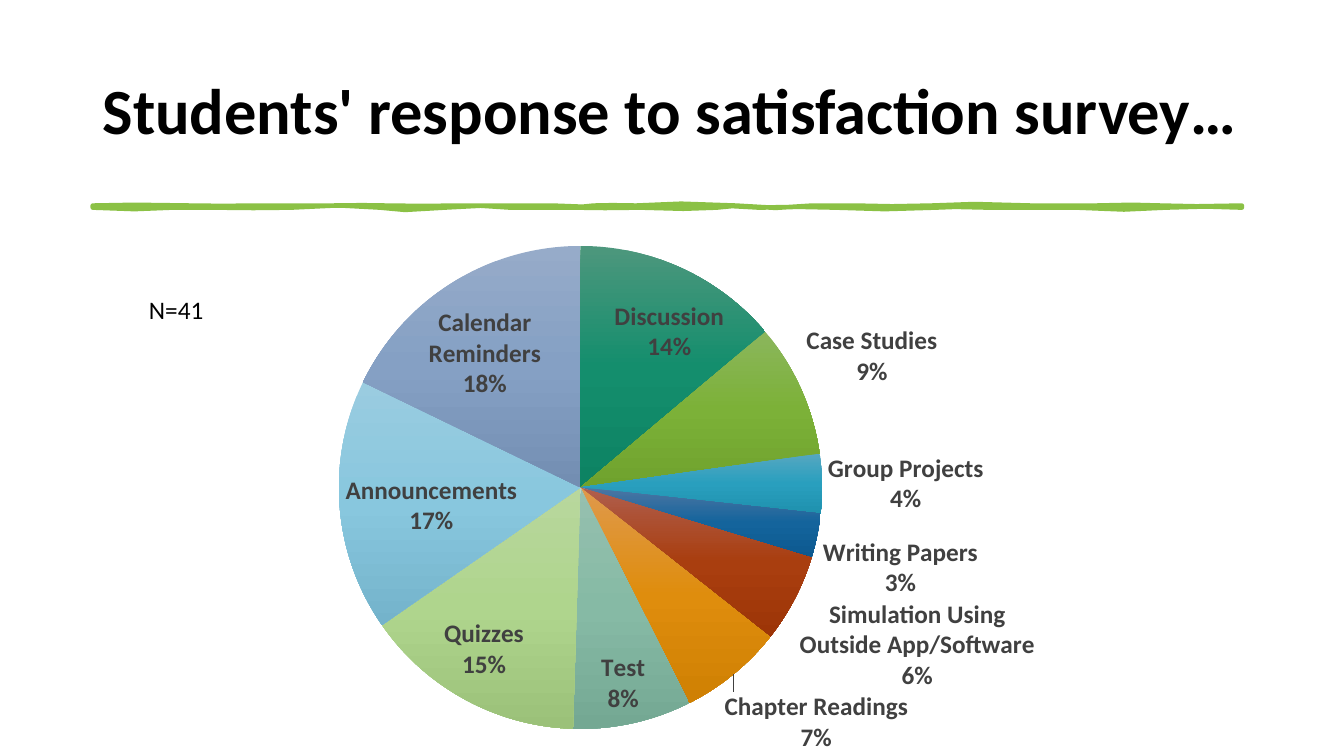
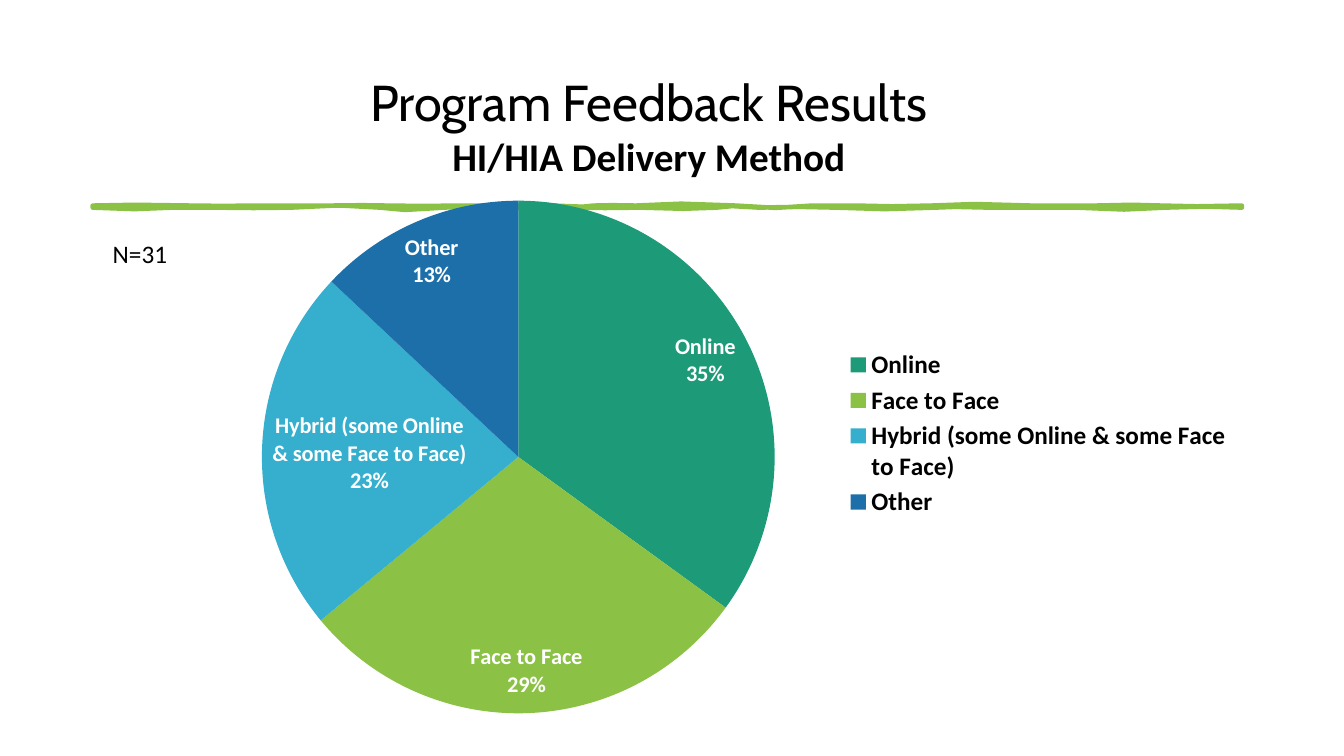
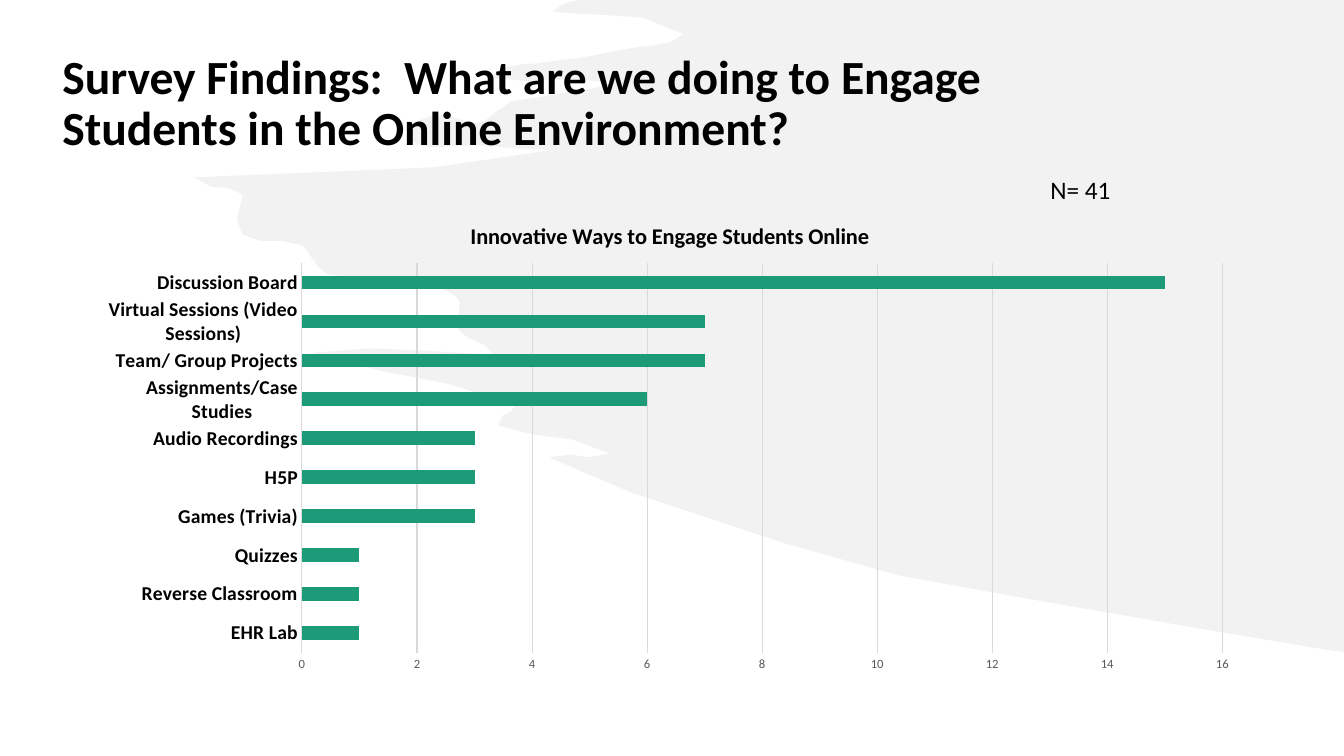
from copy import deepcopy
from dataclasses import dataclass

from lxml.etree import SubElement
from pptx import Presentation
from pptx.chart.data import CategoryChartData
from pptx.dml.color import RGBColor
from pptx.enum.chart import (XL_CHART_TYPE, XL_LABEL_POSITION,
                             XL_LEGEND_POSITION, XL_TICK_MARK)
from pptx.enum.text import MSO_ANCHOR, PP_ALIGN
from pptx.oxml import parse_xml
from pptx.oxml.ns import nsdecls, qn
from pptx.util import Inches, Pt


@dataclass(frozen=True)
class Theme:
    font: str = "Calibri"
    display_font: str = "Cabin"
    ink: str = "000000"
    grey: str = "595959"
    label_grey: str = "404040"
    grid: str = "D9D9D9"
    white: str = "FFFFFF"
    shade: str = "E7E6E6"
    teal: str = "1D9A78"
    green: str = "8BC145"
    sky: str = "36AFCE"
    blue: str = "1D6FA9"
    hero: int = 46
    display: int = 36
    heading: int = 34
    subtitle: int = 28
    body: int = 18
    label: int = 16
    category: int = 14
    small: int = 10
    tick: int = 9


THEME = Theme()

# Outlines lie on a fine grid over the slide; six numbers make one curve.
GRID_COLUMNS, GRID_ROWS = 1333.33, 750

BRUSH_START = (92, 204)
BRUSH_CURVES = [
    119, 204, 144, 202, 190, 204, 237, 206, 220, 203, 244, 204,
    267, 205, 303, 203, 331, 204, 360, 205, 359, 202, 384, 204,
    410, 206, 423, 203, 460, 204, 498, 205, 514, 203, 548, 204,
    581, 205, 581, 206, 589, 204, 598, 202, 615, 205, 631, 204,
    647, 203, 701, 200, 730, 204, 759, 208, 781, 206, 806, 204,
    831, 202, 827, 206, 848, 204, 868, 202, 901, 208, 924, 204,
    947, 200, 982, 204, 1023, 204, 1063, 204, 1063, 204, 1087, 204,
    1112, 204, 1136, 202, 1152, 204, 1168, 206, 1203, 204, 1232, 204,
    1232, 205, 1232, 205, 1232, 206, 1205, 206, 1189, 203, 1156, 206,
    1122, 209, 1110, 208, 1068, 206, 1027, 204, 1023, 208, 981, 206,
    939, 204, 952, 206, 928, 206, 904, 206, 851, 210, 829, 206,
    806, 202, 782, 208, 753, 206, 724, 204, 725, 204, 711, 206,
    698, 208, 661, 207, 635, 206, 609, 205, 590, 208, 570, 206,
    551, 204, 528, 208, 506, 206, 483, 204, 473, 203, 441, 206,
    409, 209, 390, 209, 377, 206, 363, 203, 310, 203, 289, 206,
    268, 209, 235, 204, 213, 206, 192, 208, 189, 204, 171, 206,
    154, 208, 114, 208, 92, 206, 92, 205, 92, 205, 92, 204]

WASH_START = (575, 0)
WASH_CURVES = [
    567, 1, 557, 3, 548, 12, 595, 19, 639, 6, 678, 34,
    664, 47, 648, 44, 632, 47, 616, 49, 600, 53, 584, 56,
    567, 59, 549, 60, 532, 63, 518, 65, 502, 61, 485, 77,
    527, 88, 566, 71, 608, 82, 584, 92, 563, 89, 544, 95,
    527, 100, 506, 94, 492, 111, 481, 124, 469, 126, 455, 118,
    442, 111, 428, 113, 415, 120, 411, 123, 406, 126, 406, 132,
    406, 141, 412, 143, 418, 144, 424, 146, 431, 147, 437, 146,
    474, 139, 510, 150, 547, 149, 431, 176, 314, 167, 193, 176,
    209, 195, 229, 179, 241, 193, 230, 222, 234, 237, 258, 239,
    280, 241, 304, 231, 316, 265, 320, 276, 341, 273, 355, 275,
    384, 279, 414, 275, 442, 288, 453, 293, 460, 297, 455, 311,
    449, 325, 456, 330, 466, 336, 473, 340, 483, 339, 489, 352,
    428, 350, 369, 340, 309, 350, 375, 374, 447, 373, 512, 402,
    510, 412, 495, 407, 494, 422, 528, 438, 569, 427, 605, 450,
    584, 461, 565, 444, 545, 454, 552, 469, 840, 561, 892, 571,
    978, 587, 1195, 625, 1318, 645]
WASH_CORNERS = [(1333.33, 647), (1333.33, 0)]

# Category, value, then the slice's top, middle and bottom shade
SATISFACTION = [
    ("Discussion", 14, ("4D977D", "148E6D", "0D8363")),
    ("Case Studies", 9, ("8BB65C", "7CB138", "6FA22D")),
    ("Group Projects", 4, ("55A7C1", "299FBE", "1F91AE")),
    ("Writing Papers", 3, ("4D76A3", "14649C", "0C5990")),
    ("Simulation Using Outside App/Software", 6,
     ("AF5E4D", "A93E0F", "9D3507")),
    ("Chapter Readings", 7, ("DF994C", "DF8D0D", "CF8003")),
    ("Test", 8, ("96C0AF", "86BAA5", "74A893")),
    ("Quizzes", 15, ("B8D79D", "AFD58D", "9BC179")),
    ("Announcements", 17, ("9ACCE0", "88C7DE", "74B3CB")),
    ("Calendar Reminders", 18, ("96ABC9", "85A0C4", "738EB2")),
]
DELIVERY = [
    ("Online", 35, (THEME.teal,)),
    ("Face to Face", 29, (THEME.green,)),
    ("Hybrid (some Online & some Face to Face)", 23, (THEME.sky,)),
    ("Other", 13, (THEME.blue,)),
]
ENGAGEMENT = [
    ("EHR Lab", 1), ("Reverse Classroom", 1), ("Quizzes", 1),
    ("Games (Trivia)", 3), ("H5P", 3), ("Audio Recordings", 3),
    ("Assignments/Case Studies", 6), ("Team/ Group Projects", 7),
    ("Virtual Sessions (Video Sessions)", 7), ("Discussion Board", 15),
]


def curve_points(start, curves, steps):
    """Turn a chain of cubic curves into short straight steps."""
    points = []
    for i in range(0, len(curves), 6):
        x1, y1, x2, y2, x3, y3 = curves[i:i + 6]
        for step in range(1, steps + 1):
            t = step / steps
            weights = ((1 - t) ** 3, 3 * t * (1 - t) ** 2,
                       3 * t * t * (1 - t), t ** 3)
            points.append(tuple(
                sum(w * v for w, v in zip(weights, values))
                for values in ((start[0], x1, x2, x3),
                               (start[1], y1, y2, y3))))
        start = (x3, y3)
    return points


class Deck:
    """Style and current slide; boxes are percentages of the slide's size."""

    def __init__(self, theme):
        self.theme = theme
        self.deck = Presentation()
        self.deck.slide_width = Inches(13.33)
        self.deck.slide_height = Inches(7.5)
        self.slide = None

    def new_slide(self):
        self.slide = self.deck.slides.add_slide(self.deck.slide_layouts[6])

    def box(self, shares):
        width, height = self.deck.slide_width, self.deck.slide_height
        return [round(size * share / 100)
                for size, share in zip((width, height) * 2, shares)]

    def style(self, font, size, color=None, bold=False, name=None):
        font.name = name or self.theme.font
        font.size = Pt(size)
        font.bold = bold
        font.color.rgb = RGBColor.from_string(color or self.theme.ink)

    # Text: each line is (words, size, bold, font name)
    def text(self, shares, lines, align=PP_ALIGN.LEFT,
             anchor=MSO_ANCHOR.TOP, spacing=None):
        frame = self.slide.shapes.add_textbox(*self.box(shares)).text_frame
        frame.word_wrap = True
        frame.vertical_anchor = anchor
        for i, (words, size, bold, name) in enumerate(lines):
            line = frame.add_paragraph() if i else frame.paragraphs[0]
            line.alignment = align
            line.line_spacing = spacing
            run = line.add_run()
            run.text = words
            self.style(run.font, size, bold=bold, name=name)

    def title(self, shares, words, size):
        self.text(shares, [(words, size, True, None)],
                  anchor=MSO_ANCHOR.MIDDLE, spacing=0.9)

    def sample_size(self, shares, words):
        self.text(shares, [(words, self.theme.body, False, None)])

    # Outlines
    def outline(self, start, curves, color, steps, corners=(), line=0,
                alpha=None):
        across = self.deck.slide_width / GRID_COLUMNS
        down = self.deck.slide_height / GRID_ROWS
        points = [(round(x * across), round(y * down)) for x, y in
                  [start, *curve_points(start, curves, steps), *corners]]
        builder = self.slide.shapes.build_freeform(*points[0], scale=1.0)
        builder.add_line_segments(points[1:], close=True)
        shape = builder.convert_to_shape()
        shape.shadow.inherit = False
        shape.fill.solid()
        shape.fill.fore_color.rgb = RGBColor.from_string(color)
        if line:
            shape.line.width = Pt(line)
            shape.line.color.rgb = RGBColor.from_string(color)
        else:
            shape.line.fill.background()
        if alpha:
            for fill in shape.element.spPr.findall(qn("a:solidFill")):
                SubElement(fill[0], qn("a:alpha")).set(
                    "val", str(alpha * 1000))

    def brush_rule(self):
        self.outline(BRUSH_START, BRUSH_CURVES, self.theme.green, steps=2,
                     line=3.25)

    def wash(self):
        self.outline(WASH_START, WASH_CURVES, self.theme.shade, steps=3,
                     corners=WASH_CORNERS, alpha=50)

    # Charts: the plot area is in percentages of the chart's size
    def chart(self, kind, shares, rows, plot_area):
        data = CategoryChartData()
        data.categories = [row[0] for row in rows]
        data.add_series("Series 1", [row[1] for row in rows])
        chart = self.slide.shapes.add_chart(
            kind, *self.box(shares), data).chart
        self.style(chart.font, self.theme.small)
        chart.has_title = chart.has_legend = False
        area = chart.element.xpath(".//c:plotArea")[0]
        for layout in area.findall(qn("c:layout")):
            area.remove(layout)
        sides = "".join(f'<c:{side} val="{share / 100:.4f}"/>'
                        for side, share in zip("xywh", plot_area))
        area.insert(0, parse_xml(
            f'<c:layout {nsdecls("c")}><c:manualLayout>'
            '<c:layoutTarget val="inner"/><c:xMode val="edge"/>'
            f'<c:yMode val="edge"/>{sides}</c:manualLayout></c:layout>'))
        return chart

    def slice_fill(self, chart, fill, shades):
        if len(shades) == 1:
            fill.solid()
            fill.fore_color.rgb = RGBColor.from_string(shades[0])
            return
        fill.gradient()
        fill.gradient_angle = 270
        stops = chart.element.xpath(".//a:gsLst")[-1]
        stops.insert(1, deepcopy(stops[0]))
        for i, stop in enumerate(fill.gradient_stops):
            stop.position = i / 2
            stop.color.rgb = RGBColor.from_string(shades[i])

    def pie(self, shares, rows, plot_area, size, color, inside=()):
        chart = self.chart(XL_CHART_TYPE.PIE, shares, rows, plot_area)
        chart.plots[0].vary_by_categories = False
        pie = chart.plots[0].series[0]
        for i, (_, _, shades) in enumerate(rows):
            self.slice_fill(chart, pie.points[i].format.fill, shades)
        labels = pie.data_labels
        labels.number_format = "0%"
        labels.number_format_is_linked = False
        labels.position = XL_LABEL_POSITION.BEST_FIT
        self.style(labels.font, size, color, bold=True)
        for i in inside:
            label = pie.points[i].data_label
            self.style(label.font, size, color, bold=True)
            label.position = XL_LABEL_POSITION.INSIDE_END
        # Every label shows its category over its percentage
        for tag, shown in (("showVal", "0"), ("showCatName", "1"),
                           ("showPercent", "1")):
            for flag in chart.element.xpath(f".//c:{tag}"):
                flag.set("val", shown)
        for flag in chart.element.xpath(".//c:showBubbleSize"):
            flag.addnext(parse_xml(
                f'<c:separator {nsdecls("c")}>\n</c:separator>'))
        return chart

    def legend(self, chart):
        chart.has_legend = True
        chart.legend.position = XL_LEGEND_POSITION.RIGHT
        chart.legend.include_in_layout = False
        self.style(chart.legend.font, self.theme.body, bold=True)

    def bars(self, shares, rows, plot_area, heading):
        theme = self.theme
        chart = self.chart(XL_CHART_TYPE.BAR_CLUSTERED, shares, rows,
                           plot_area)
        chart.has_title = True
        run = chart.chart_title.text_frame.paragraphs[0].add_run()
        run.text = heading
        self.style(run.font, theme.label, bold=True)
        plot = chart.plots[0]
        plot.vary_by_categories = False
        plot.gap_width = 182
        fill = plot.series[0].format.fill
        fill.solid()
        fill.fore_color.rgb = RGBColor.from_string(theme.teal)
        names, counts = chart.category_axis, chart.value_axis
        for axis in (names, counts):
            axis.major_tick_mark = axis.minor_tick_mark = XL_TICK_MARK.NONE
        self.style(names.tick_labels.font, theme.category, bold=True)
        self.style(counts.tick_labels.font, theme.tick, theme.grey)
        counts.minimum_scale, counts.maximum_scale = 0, 16
        counts.major_unit = 2
        counts.has_major_gridlines = True
        counts.format.line.fill.background()
        for line in (names.format.line, counts.major_gridlines.format.line):
            line.width = Pt(0.75)
            line.color.rgb = RGBColor.from_string(theme.grid)


def main():
    deck = Deck(THEME)

    # Satisfaction survey
    deck.new_slide()
    deck.title((6.9, 5.33, 86.25, 19.33),
               "Students' response to satisfaction survey…", THEME.hero)
    deck.brush_rule()
    deck.pie((1.95, 32.53, 91.15, 67.47), SATISFACTION,
             (6.2, 0, 78.1, 94.7), THEME.body, THEME.label_grey,
             inside=[8])
    deck.sample_size((10.35, 38.27, 8.4, 5.33), "N=41")

    # Delivery method
    deck.new_slide()
    deck.brush_rule()
    delivery = deck.pie((3.98, 18.27, 88.45, 78.13), DELIVERY,
                        (17.5, 10.6, 43.2, 86.8), THEME.label, THEME.white)
    deck.legend(delivery)
    deck.text((6.9, 8.8, 82.75, 15.73),
              [("Program Feedback Results", THEME.display, False,
                THEME.display_font),
               ("HI/HIA Delivery Method", THEME.subtitle, True, None)],
              align=PP_ALIGN.CENTER)
    deck.sample_size((7.65, 30.93, 7.05, 5.33), "N=31")

    # Engagement online
    deck.new_slide()
    deck.wash()
    deck.title((3.9, 0, 73.52, 27.6),
               "Survey Findings:  What are we doing to Engage Students "
               "in the Online Environment?", THEME.heading)
    deck.bars((6.9, 26.67, 86.25, 63.47), ENGAGEMENT,
              (18.05, 12.8, 79.4, 81.2),
              "Innovative Ways to Engage Students Online ")
    deck.sample_size((77.42, 22.4, 15.75, 5.33), "N= 41")

    deck.deck.save("out.pptx")


if __name__ == "__main__":
    main()
